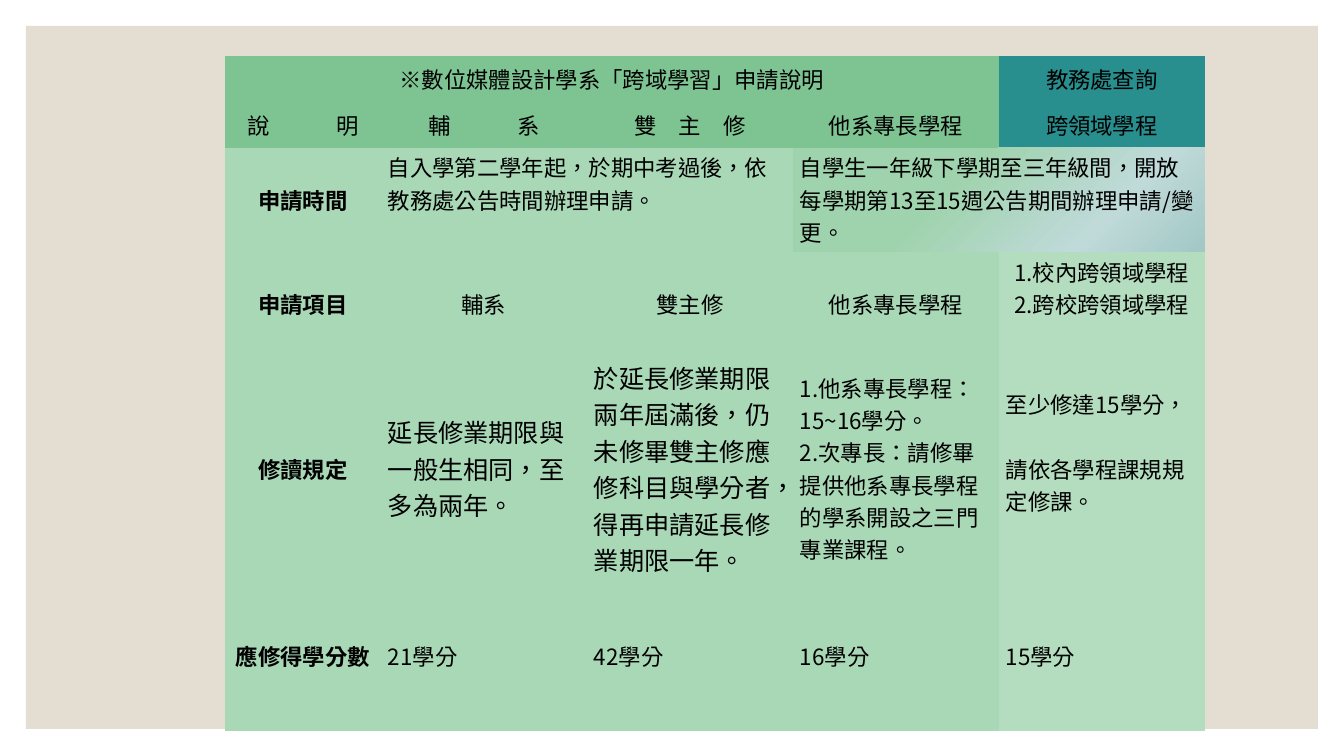
"""Build the slide that explains how to apply for cross-domain study."""
from dataclasses import dataclass

from lxml import etree
from pptx import Presentation
from pptx.dml.color import RGBColor
from pptx.enum.lang import MSO_LANGUAGE_ID as Language
from pptx.enum.shapes import MSO_SHAPE as Shape
from pptx.enum.text import MSO_ANCHOR as Anchor, PP_ALIGN as Align
from pptx.oxml import parse_xml
from pptx.oxml.ns import nsdecls, qn
from pptx.util import Emu, Pt


@dataclass(frozen=True)
class Theme:
    font: str = "Noto Sans CJK SC"
    text: str = "000000"
    panel: str = "E3DED1"
    header: str = "7EC492"
    header_office: str = "288E8E"
    body: str = "A9D8B7"
    body_office: str = "B4DDBF"
    glow: tuple = ((0, "F4FAF6"), (0, "A1C8C5"), (26, "C0DAD9"), (62, "9FD3AD"))
    normal: int = 16
    large: int = 18
    paragraph_gap: int = 23


def px(length):
    return Emu(round(length * 914400 / 100.8))


theme = Theme()
column_widths = [156, 206, 206, 206, 206]
row_heights = [45, 47, 104, 104, 224, 150]
rows = [
    ["※數位媒體設計學系「跨域學習」申請說明", None, None, None, "教務處查詢"],
    ["說　　　明", "輔　　　系", "雙　主　修", "他系專長學程", "跨領域學程"],
    ["申請時間", "自入學第二學年起，於期中考過後，依教務處公告時間辦理申請。", None,
     "自學生一年級下學期至三年級間，開放每學期第13至15週公告期間辦理申請/變更。", None],
    ["申請項目", "輔系", "雙主修", "他系專長學程",
     "1.校內跨領域學程\n2.跨校跨領域學程"],
    ["修讀規定", "延長修業期限與一般生相同，至多為兩年。",
     "於延長修業期限兩年屆滿後，仍未修畢雙主修應修科目與學分者，得再申請延長修業期限一年。",
     "1.他系專長學程：15~16學分。\n2.次專長：請修畢提供他系專長學程的學系開設之三門專業課程。",
     "至少修達15學分，\n請依各學程課規規定修課。"],
    ["應修得學分數", "21學分", "42學分", "16學分", "15學分"],
]
HEADER_ROWS, TIME_ROW, ITEM_ROW, RULE_ROW = (0, 1), 2, 3, 4
OFFICE_COLUMN = 4

deck = Presentation()
deck.slide_width, deck.slide_height = px(1344), px(756)
page = deck.slides.add_slide(deck.slide_layouts[6])

panel = page.shapes.add_shape(Shape.RECTANGLE, px(26), px(26), px(1292), px(703))
panel.shadow.inherit = False
panel.fill.solid()
panel.fill.fore_color.rgb = RGBColor.from_string(theme.panel)
panel.line.fill.background()

frame = page.shapes.add_table(len(rows), len(column_widths), px(225), px(56),
                              px(sum(column_widths)), px(sum(row_heights)))
table = frame.table
table.first_row = table.horz_banding = False
table_style = frame._element.find(".//" + qn("a:tableStyleId"))
table_style.text = "{2D5ABB26-0587-4C30-8999-92F81FD0307C}"
for column, width in zip(table.columns, column_widths):
    column.width = px(width)
for row, height in zip(table.rows, row_heights):
    row.height = px(height)
for row, first, last in ((0, 0, 3), (TIME_ROW, 1, 2), (TIME_ROW, 3, 4)):
    table.cell(row, first).merge(table.cell(row, last))

for row, texts in enumerate(rows):
    for column, text in enumerate(texts):
        if text is None:
            continue
        cell = table.cell(row, column)
        is_header = row in HEADER_ROWS
        is_label = column == 0 and not is_header
        is_office = column == OFFICE_COLUMN
        is_list = is_office and "\n" in text
        centred = is_header or is_label or row == ITEM_ROW
        is_large = row == RULE_ROW and column in (1, 2)

        cell.margin_left = cell.margin_right = px(7)
        cell.margin_top = px(3)
        cell.margin_bottom = px(35 if is_list else 3)
        cell.vertical_anchor = Anchor.TOP if row == TIME_ROW and column else Anchor.MIDDLE

        if row == TIME_ROW and column == 3:
            stops = "".join(f'<a:gs pos="{place * 1000}"><a:srgbClr val="{colour}"/></a:gs>'
                            for place, colour in theme.glow)
            cell._tc.get_or_add_tcPr().append(parse_xml(
                f'<a:gradFill {nsdecls("a")} rotWithShape="1"><a:gsLst>{stops}</a:gsLst>'
                '<a:path path="circle"><a:fillToRect l="100000" t="100000"/></a:path>'
                '</a:gradFill>'))
        else:
            if is_header:
                colour = theme.header_office if is_office else theme.header
            else:
                colour = theme.body_office if is_office else theme.body
            cell.fill.solid()
            cell.fill.fore_color.rgb = RGBColor.from_string(colour)

        for number, line in enumerate(text.split("\n")):
            para = cell.text_frame.add_paragraph() if number else cell.text_frame.paragraphs[0]
            para.alignment = Align.CENTER if centred else Align.LEFT
            if number and row == RULE_ROW and is_office:
                para.space_before = Pt(theme.paragraph_gap)
            span = para.add_run()
            span.text = line
            span.font.name = theme.font
            span.font.size = Pt(theme.large if is_large else theme.normal)
            span.font.bold = is_label
            span.font.color.rgb = RGBColor.from_string(theme.text)
            span.font.language_id = Language.TRADITIONAL_CHINESE
            east_asian = etree.SubElement(span._r.get_or_add_rPr(), qn("a:ea"))
            east_asian.set("typeface", theme.font)

deck.save("out.pptx")
